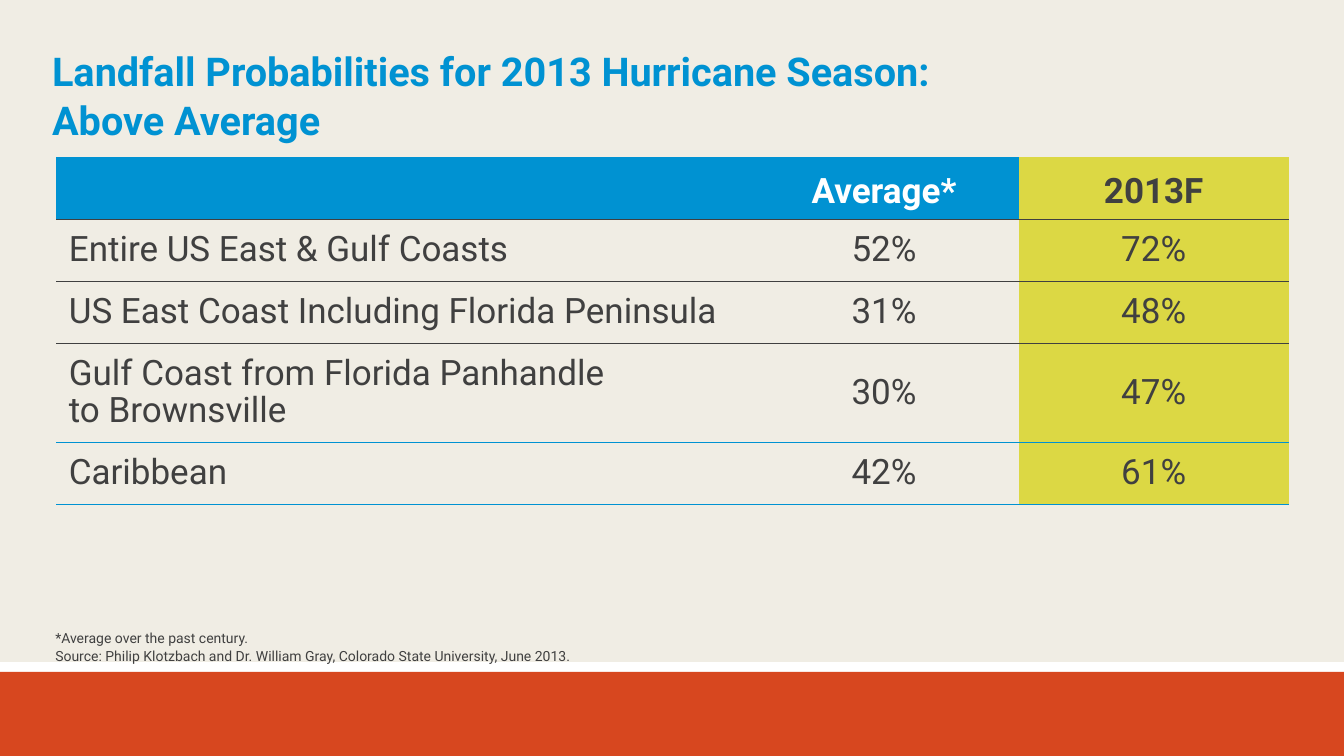
from lxml import etree
from pptx import Presentation
from pptx.dml.color import RGBColor
from pptx.enum.shapes import MSO_SHAPE
from pptx.enum.text import MSO_ANCHOR, PP_ALIGN
from pptx.oxml.ns import qn
from pptx.util import Inches, Pt

TITLE = "Landfall Probabilities for 2013 Hurricane Season:\vAbove Average"
ROWS = [
    ("", "Average*", "2013F"),
    ("Entire US East & Gulf Coasts", "52%", "72%"),
    ("US East Coast Including Florida Peninsula", "31%", "48%"),
    ("Gulf Coast from Florida Panhandle\vto Brownsville", "30%", "47%"),
    ("Caribbean", "42%", "61%"),
]
FOOTNOTES = [
    "*Average over the past century.",
    "Source: Philip Klotzbach and Dr. William Gray, Colorado State University, June 2013.",
]

BLUE = RGBColor(0x00, 0x92, 0xD2)
YELLOW = RGBColor(0xDC, 0xD8, 0x44)
DARK = RGBColor(0x40, 0x40, 0x40)
WHITE = RGBColor(0xFF, 0xFF, 0xFF)
ORANGE = RGBColor(0xD7, 0x47, 0x1F)
CREAM = RGBColor(0xF0, 0xED, 0xE4)

FONT = "Roboto"
RECTANGLE = MSO_SHAPE.RECTANGLE
LEFT, CENTER = PP_ALIGN.LEFT, PP_ALIGN.CENTER
MIDDLE, BOTTOM = MSO_ANCHOR.MIDDLE, MSO_ANCHOR.BOTTOM

BANDS = [(8, 1, ORANGE), (0, 7.88, CREAM)]  # top, height, colour
COLUMN_WIDTHS = [8.25, 3.21, 3.21]
ROW_HEIGHTS = [0.74, 0.74, 0.74, 1.18, 0.74]
RULE_COLORS = [DARK, DARK, DARK, BLUE, BLUE]  # line below each row


def style_paragraph(paragraph, size, color, bold=False, align=LEFT, spacing=None):
    paragraph.alignment = align
    paragraph.line_spacing = spacing
    for run in paragraph.runs:
        run.font.name = FONT
        run.font.size = Pt(size)
        run.font.bold = bold
        run.font.color.rgb = color


def set_borders(cell, top, bottom):
    """Draw thin lines above and below a cell, where a colour is given; none at its sides."""
    properties = cell._tc.get_or_add_tcPr()
    sides = [("a:lnL", None), ("a:lnR", None), ("a:lnT", top), ("a:lnB", bottom)]
    for position, (tag, color) in enumerate(sides):
        line = etree.Element(qn(tag), w=str(Pt(0.5)))
        if color is None:
            etree.SubElement(line, qn("a:noFill"))
        else:
            fill = etree.SubElement(line, qn("a:solidFill"))
            etree.SubElement(fill, qn("a:srgbClr"), val=str(color))
        properties.insert(position, line)


def add_title(slide):
    title = slide.shapes.title
    title.left, title.top = Inches(0.52), Inches(0.5)
    title.width, title.height = Inches(14.4), Inches(1.25)
    title.text_frame.text = TITLE
    title.text_frame.vertical_anchor = MIDDLE
    style_paragraph(title.text_frame.paragraphs[0], 34, BLUE, bold=True, spacing=1.03)


def add_bands(slide, width):
    for top, height, color in BANDS:
        band = slide.shapes.add_shape(RECTANGLE, 0, Inches(top), width, Inches(height))
        band.shadow.inherit = False
        band.fill.solid()
        band.fill.fore_color.rgb = color
        band.line.fill.background()
        slide.shapes.title.element.addprevious(band.element)


def fill_cell(cell, text, row, column):
    is_header, is_forecast = row == 0, column == 2
    cell.text_frame.text = text
    cell.margin_left = cell.margin_right = cell.margin_top = Inches(0.15)
    cell.margin_bottom = Inches(0.1 if is_header else 0.15)
    cell.vertical_anchor = BOTTOM if is_header else MIDDLE
    style_paragraph(
        cell.text_frame.paragraphs[0], 30,
        WHITE if is_header and not is_forecast else DARK,
        bold=is_header, align=CENTER if column else LEFT, spacing=0.9,
    )
    if is_header or is_forecast:
        cell.fill.solid()
        cell.fill.fore_color.rgb = YELLOW if is_forecast else BLUE
    else:
        cell.fill.background()
    set_borders(cell, None if is_header else RULE_COLORS[row - 1], RULE_COLORS[row])


def add_probability_table(slide):
    table = slide.shapes.add_table(
        len(ROWS), len(COLUMN_WIDTHS), Inches(0.67), Inches(1.87),
        Inches(sum(COLUMN_WIDTHS)), Inches(sum(ROW_HEIGHTS)),
    ).table
    table.first_row = table.horz_banding = False
    for column, width in zip(table.columns, COLUMN_WIDTHS):
        column.width = Inches(width)
    for row, height in zip(table.rows, ROW_HEIGHTS):
        row.height = Inches(height)
    for row, texts in enumerate(ROWS):
        for column, text in enumerate(texts):
            fill_cell(table.cell(row, column), text, row, column)


def add_footnotes(slide):
    box = slide.shapes.add_textbox(Inches(0.56), Inches(7.46), Inches(6.5), Inches(0.5))
    frame = box.text_frame
    frame.word_wrap = False
    frame.vertical_anchor = BOTTOM
    frame.text = "\n".join(FOOTNOTES)
    for paragraph in frame.paragraphs:
        style_paragraph(paragraph, 12, DARK, spacing=0.85)
    frame.paragraphs[1].space_before = Pt(3)


def main():
    presentation = Presentation()
    presentation.slide_width, presentation.slide_height = Inches(16), Inches(9)
    slide = presentation.slides.add_slide(presentation.slide_layouts.get_by_name("Title Only"))
    add_title(slide)
    add_bands(slide, presentation.slide_width)
    add_probability_table(slide)
    add_footnotes(slide)
    presentation.save("out.pptx")


if __name__ == "__main__":
    main()
